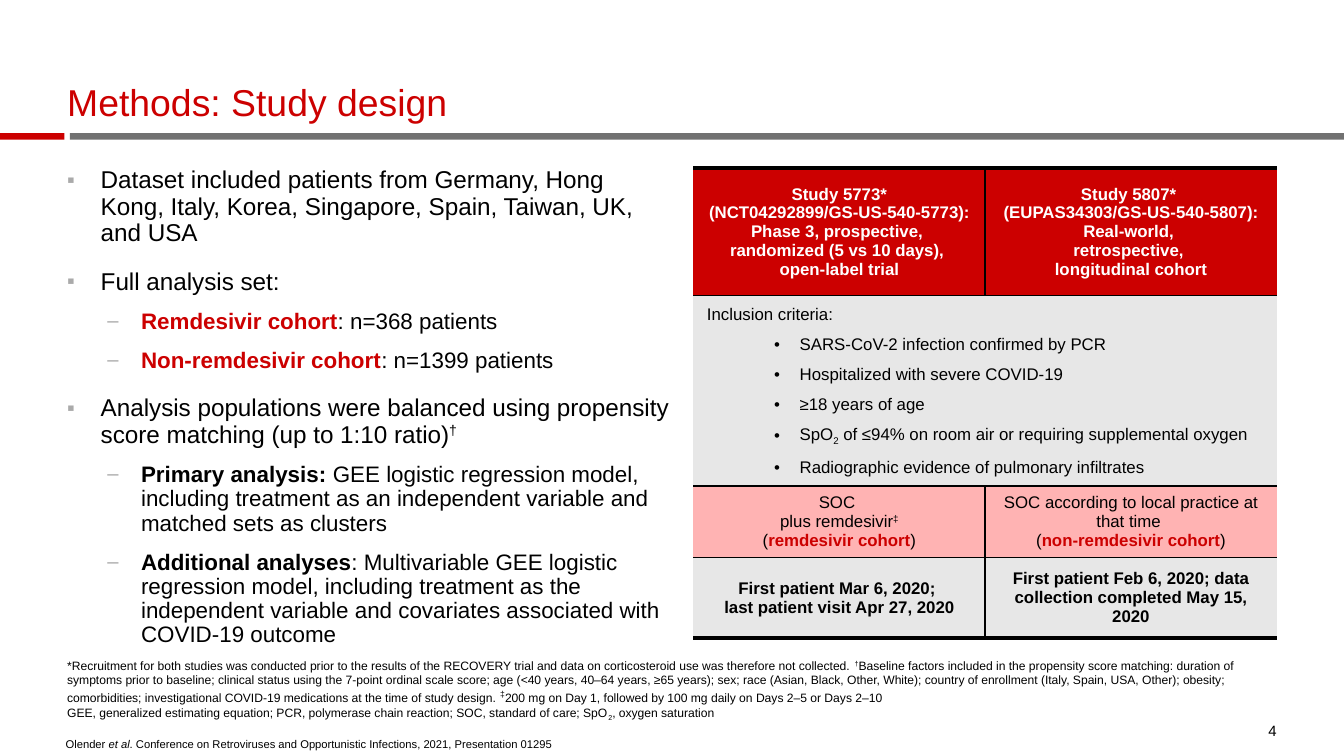
"""Build the study design slide with its bullet list, study table and footnotes."""
from dataclasses import dataclass
from typing import Optional

from lxml import etree
from pptx import Presentation, util as u
from pptx.dml.color import RGBColor
from pptx.enum import shapes, text
from pptx.oxml import ns

BLACK = RGBColor(0x00, 0x00, 0x00)
WHITE = RGBColor(0xFF, 0xFF, 0xFF)
RED = RGBColor(0xCC, 0x00, 0x00)
GRAY = RGBColor(0x71, 0x71, 0x71)
BULLET_GRAY = RGBColor(0xAA, 0xAA, 0xAA)
PALE_GRAY = RGBColor(0xE7, 0xE7, 0xE7)
PINK = RGBColor(0xFF, 0xB3, 0xB3)
FONT = "Arial"
CENTER = text.PP_ALIGN.CENTER
TOP, MIDDLE, BOTTOM = text.MSO_ANCHOR.TOP, text.MSO_ANCHOR.MIDDLE, text.MSO_ANCHOR.BOTTOM


@dataclass(frozen=True)
class Span:
    text: str
    bold: bool = False
    italic: bool = False
    color: Optional[RGBColor] = None
    baseline: int = 0
    size: Optional[float] = None


@dataclass(frozen=True)
class Style:
    size: float
    color: RGBColor = BLACK
    align: text.PP_ALIGN = text.PP_ALIGN.LEFT
    line: float = 1.0
    before: float = 0
    after: float = 0
    level: int = 0
    indent: float = 0
    hanging: float = 0
    bullet: str = ""
    bullet_color: Optional[RGBColor] = None
    bullet_size: int = 100


@dataclass(frozen=True)
class Para:
    style: Style
    spans: tuple[Span, ...]


@dataclass(frozen=True)
class Cell:
    paras: tuple[Para, ...]
    fill: RGBColor
    margins: tuple[float, float] = (0.07, 0)


TITLE = Style(20, RED, line=0.9)
TOPIC = Style(13, line=0.9, before=12, indent=0.25, hanging=0.25,
              bullet="▪", bullet_color=BULLET_GRAY, bullet_size=90)
DETAIL = Style(12, line=0.9, before=8, level=1, indent=0.55, hanging=0.25,
               bullet="–", bullet_color=BULLET_GRAY, bullet_size=90)
NOTE = Style(6.5)
SOURCE = Style(6)
PAGE_NUMBER = Style(8, align=text.PP_ALIGN.RIGHT)
HEADER = Style(9, WHITE, CENTER)
CRITERIA = Style(9, before=5, after=1)
CRITERION = Style(9, before=5, after=1, level=1, indent=0.69, hanging=0.19, bullet="•")
COHORT = Style(9, align=CENTER, before=5, after=12)


def para(style: Style, *spans: Span | str) -> Para:
    return Para(style, tuple(Span(s) if isinstance(s, str) else s for s in spans))


def header(*lines: str) -> Cell:
    return Cell(tuple(para(HEADER, Span(line, bold=True)) for line in lines), RED, (0.1, 0.04))


BODY = (
    para(TOPIC, "Dataset included patients from Germany, Hong Kong, Italy, Korea, "
                "Singapore, Spain, Taiwan, UK, and USA"),
    para(TOPIC, "Full analysis set:"),
    para(DETAIL, Span("Remdesivir cohort", bold=True, color=RED), ": n=368 patients"),
    para(DETAIL, Span("Non-remdesivir cohort", bold=True, color=RED), ": n=1399 patients"),
    para(TOPIC, "Analysis populations were balanced using propensity score matching "
                "(up to 1:10 ratio)", Span("†", baseline=30)),
    para(DETAIL, Span("Primary analysis: ", bold=True),
         "GEE logistic regression model, including treatment as an independent variable "
         "and matched sets as clusters"),
    para(DETAIL, Span("Additional analyses", bold=True),
         ": Multivariable GEE logistic regression model, including treatment as the "
         "independent variable and covariates associated with COVID-19 outcome"),
)
FOOTNOTE = para(
    NOTE,
    "*Recruitment for both studies was conducted prior to the results of the RECOVERY trial "
    "and data on corticosteroid use was therefore not collected. ",
    Span("†", baseline=30),
    "Baseline factors included in the propensity score matching: duration of symptoms prior to "
    "baseline; clinical status using the 7-point ordinal scale score; age (<40 years, 40–64 "
    "years, ≥65 years); sex; race (Asian, Black, Other, White); country of enrollment (Italy, "
    "Spain, USA, Other); obesity; comorbidities; investigational COVID-19 medications at the "
    "time of study design. ",
    Span("‡", baseline=30, size=8),
    "200 mg on Day 1, followed by 100 mg daily on Days 2–5 or Days 2–10\n"
    "GEE, generalized estimating equation; PCR, polymerase chain reaction; SOC, standard of "
    "care; SpO",
    Span("2", baseline=-25), ", oxygen saturation")
CITATION = para(SOURCE, "Olender ", Span("et al", italic=True),
                ". Conference on Retroviruses and Opportunistic Infections, 2021, "
                "Presentation 01295")
ROW_HEIGHTS = (0.95, 1.41, 0.53, 0.6)
COLUMN_WIDTH = 2.17
STUDY_ROWS = (
    (header("Study 5773*", "(NCT04292899/GS-US-540-5773):\nPhase 3, prospective, \n"
                           "randomized (5 vs 10 days), \nopen-label trial"),
     header("Study 5807* \n(EUPAS34303/GS-US-540-5807):\nReal-world, \nretrospective, \n"
            "longitudinal cohort")),
    (Cell((para(CRITERIA, "Inclusion criteria:"),
           para(CRITERION, "SARS-CoV-2 infection confirmed by PCR"),
           para(CRITERION, "Hospitalized with severe COVID-19"),
           para(CRITERION, "≥18 years of age"),
           para(CRITERION, "SpO", Span("2", baseline=-25),
                " of ≤94% on room air or requiring supplemental oxygen"),
           para(CRITERION, "Radiographic evidence of pulmonary infiltrates")),
          PALE_GRAY, (0.1, 0.04)),),
    (Cell((para(COHORT, "SOC \nplus remdesivir", Span("‡\n", baseline=30), "(",
                Span("remdesivir cohort", bold=True, color=RED), ")"),), PINK),
     Cell((para(COHORT, "SOC according to local practice at that time \n(",
                Span("non-remdesivir cohort", bold=True, color=RED), ")"),), PINK)),
    (Cell((para(COHORT, Span("First patient Mar 6, 2020; \nlast patient visit Apr 27, 2020",
                             bold=True)),), PALE_GRAY),
     Cell((para(COHORT, Span("First patient Feb 6, 2020; data collection completed "
                             "May 15, 2020", bold=True)),), PALE_GRAY)),
)


def add_child(parent, tag: str, **attributes):
    return etree.SubElement(parent, ns.qn(tag), attributes)


def set_bullet(paragraph, style: Style) -> None:
    properties = paragraph._p.get_or_add_pPr()
    properties.set("marL", str(u.Inches(style.indent)))
    properties.set("indent", str(-u.Inches(style.hanging)))
    if style.bullet_color is not None:
        color = add_child(properties, "a:buClr")
        add_child(color, "a:srgbClr", val=str(style.bullet_color))
    add_child(properties, "a:buSzPct", val=str(style.bullet_size * 1000))
    add_child(properties, "a:buFont", typeface=FONT)
    add_child(properties, "a:buChar", char=style.bullet)


def write_span(paragraph, span: Span, style: Style) -> None:
    for index, line in enumerate(span.text.split("\n")):
        if index:
            paragraph.add_line_break()
        if not line:
            continue
        run = paragraph.add_run()
        run.text = line
        font = run.font
        font.name, font.size = FONT, u.Pt(span.size or style.size)
        font.bold, font.italic = span.bold, span.italic
        font.color.rgb = style.color if span.color is None else span.color
        if span.baseline:
            run._r.get_or_add_rPr().set("baseline", str(span.baseline * 1000))


def write_paras(frame, paras: tuple[Para, ...]) -> None:
    for index, item in enumerate(paras):
        paragraph = frame.add_paragraph() if index else frame.paragraphs[0]
        style = item.style
        paragraph.alignment, paragraph.level = style.align, style.level
        paragraph.line_spacing = style.line
        paragraph.space_before, paragraph.space_after = u.Pt(style.before), u.Pt(style.after)
        if style.bullet:
            set_bullet(paragraph, style)
        for span in item.spans:
            write_span(paragraph, span, style)


def add_text(page, at: tuple[float, ...], paras: tuple[Para, ...],
             anchor: text.MSO_ANCHOR = TOP, margins: tuple[float, float] = (0, 0)) -> None:
    frame = page.shapes.add_textbox(*map(u.Inches, at)).text_frame
    frame.word_wrap, frame.vertical_anchor = True, anchor
    frame.margin_left = frame.margin_right = u.Inches(margins[0])
    frame.margin_top = frame.margin_bottom = u.Inches(margins[1])
    write_paras(frame, paras)


def add_bar(page, left: float, width: float, color: RGBColor) -> None:
    bar = page.shapes.add_shape(shapes.MSO_SHAPE.RECTANGLE, u.Inches(left), u.Inches(0.99),
                                u.Inches(width), u.Inches(0.05))
    bar.shadow.inherit = False
    bar.fill.solid()
    bar.fill.fore_color.rgb = color
    bar.line.fill.background()


def set_borders(cell, widths: dict[str, float]) -> None:
    properties = cell._tc.get_or_add_tcPr()
    for side, width in widths.items():
        line = add_child(properties, f"a:ln{side}", w=str(u.Pt(width)))
        if width:
            fill = add_child(line, "a:solidFill")
            add_child(fill, "a:srgbClr", val=str(BLACK))
        else:
            add_child(line, "a:noFill")


def add_study_table(page) -> None:
    table = page.shapes.add_table(len(ROW_HEIGHTS), 2, u.Inches(5.16), u.Inches(1.25),
                                  u.Inches(2 * COLUMN_WIDTH),
                                  u.Inches(sum(ROW_HEIGHTS))).table
    table.first_row = table.horz_banding = False
    for column in table.columns:
        column.width = u.Inches(COLUMN_WIDTH)
    last = len(ROW_HEIGHTS) - 1
    for row, (height, contents) in enumerate(zip(ROW_HEIGHTS, STUDY_ROWS)):
        table.rows[row].height = u.Inches(height)
        divider = len(contents) - 1
        for column in range(2):
            cell = table.cell(row, column)
            set_borders(cell, {"L": divider * column, "R": divider * (1 - column),
                               "T": 2 if row == 0 else 1, "B": 2 if row == last else 1})
            cell.fill.solid()
            cell.fill.fore_color.rgb = contents[0].fill
        if not divider:
            table.cell(row, 0).merge(table.cell(row, 1))
        for column, content in enumerate(contents):
            cell = table.cell(row, column)
            cell.vertical_anchor = MIDDLE
            cell.margin_left = cell.margin_right = u.Inches(content.margins[0])
            cell.margin_top = cell.margin_bottom = u.Inches(content.margins[1])
            write_paras(cell.text_frame, content.paras)


def main() -> None:
    deck = Presentation()
    deck.slide_width, deck.slide_height = u.Inches(10), u.Inches(10 * 9 / 16)
    page = deck.slides.add_slide(deck.slide_layouts[6])
    add_bar(page, 0.52, 9.48, GRAY)
    add_bar(page, 0, 0.48, RED)
    add_text(page, (0.39, 5.44, 4.74, 0.14), (CITATION,), margins=(0.1, 0.05))
    add_text(page, (0.5, 0.38, 9, 0.55), (para(TITLE, "Methods: Study design"),), BOTTOM)
    add_text(page, (0.5, 1.25, 4.5, 3.44), BODY)
    add_text(page, (9.23, 5.36, 0.27, 0.14), (para(PAGE_NUMBER, "4"),), BOTTOM)
    add_text(page, (0.5, 4.5, 9, 0.87), (FOOTNOTE,), BOTTOM)
    add_study_table(page)
    deck.save("out.pptx")


if __name__ == "__main__":
    main()
